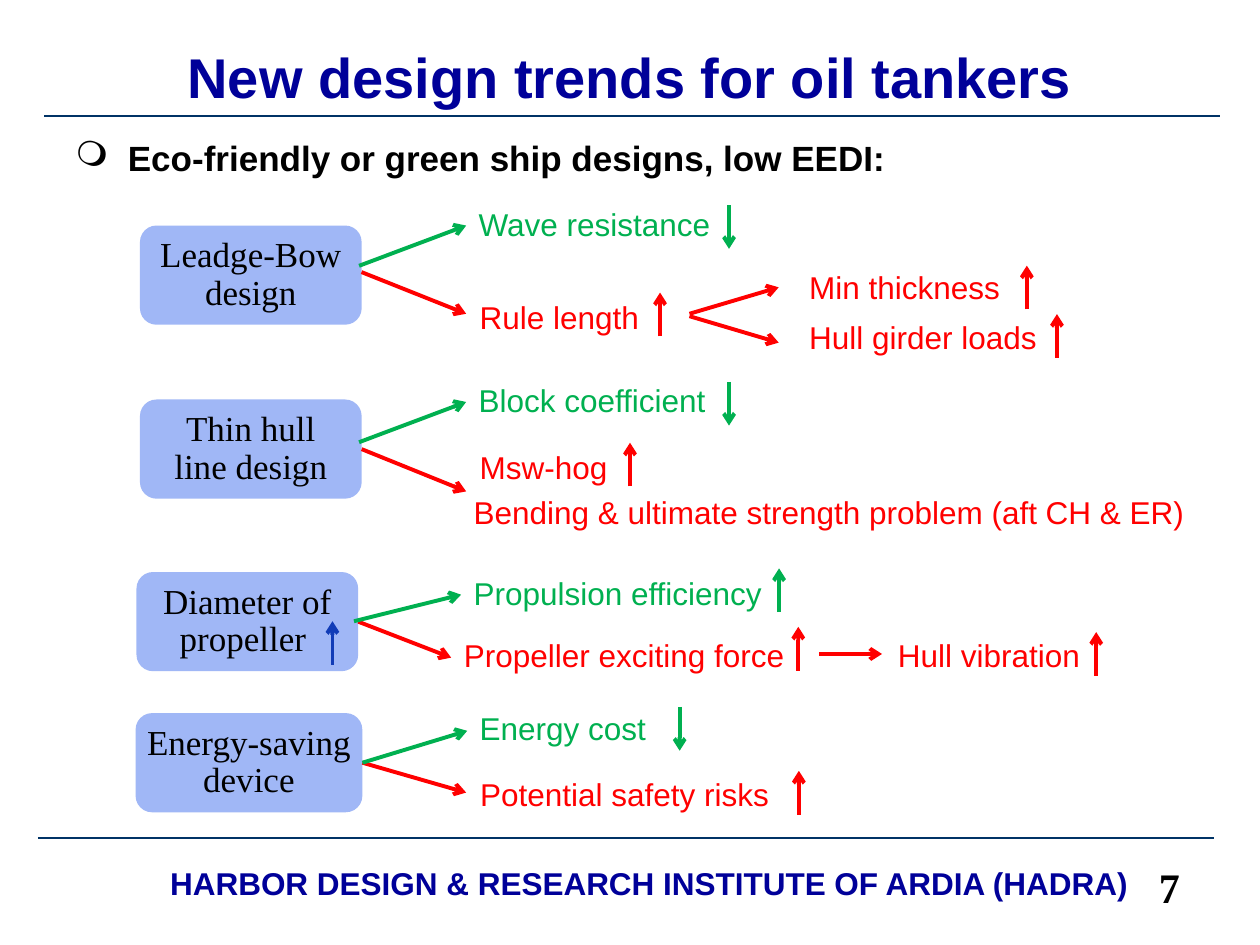
from lxml import etree
from pptx import Presentation
from pptx.dml.color import RGBColor
from pptx.enum.shapes import MSO_CONNECTOR as CONNECTOR, MSO_SHAPE as SHAPE
from pptx.enum.text import MSO_ANCHOR as ANCHOR, PP_ALIGN as ALIGN
from pptx.oxml.ns import qn
from pptx.util import Pt

COLORS = {"navy": "000099", "rule": "003366", "box": "A0B7F6", "black": "000000",
          "good": "00B050", "bad": "FF0000", "blue": "113CB7"}
RIGHT_SIDE = 3
ARROW_HEIGHT = 25

presentation = Presentation()
presentation.slide_width, presentation.slide_height = Pt(720), Pt(540)
slide = presentation.slides.add_slide(presentation.slide_layouts[5])


def write(shape, text, color, size=18, name="Arial", bold=False, align=ALIGN.LEFT,
          spacing=0.9, anchor=ANCHOR.TOP):
    frame = shape.text_frame
    frame.word_wrap = True
    frame.vertical_anchor = anchor
    paragraph = frame.paragraphs[0]
    paragraph.text = text
    paragraph.alignment = align
    paragraph.line_spacing = spacing
    paragraph.space_before = Pt(0)
    for attribute, value in {"size": Pt(size), "name": name, "bold": bold}.items():
        setattr(paragraph.font, attribute, value)
    paragraph.font.color.rgb = RGBColor.from_string(COLORS[color])
    return paragraph


def draw_line(start_x, start_y, end_x, end_y, color, width=2.25, arrow=True):
    line = slide.shapes.add_connector(
        CONNECTOR.STRAIGHT, Pt(start_x), Pt(start_y), Pt(end_x), Pt(end_y))
    line.line.width = Pt(width)
    line.line.color.rgb = RGBColor.from_string(COLORS[color])
    if arrow:
        etree.SubElement(line.line._get_or_add_ln(), qn("a:tailEnd"), type="arrow")
    etree.SubElement(line._element.spPr, qn("a:effectLst"))
    return line


for left, y in [(21.6, 478.8), (25.2, 66.2)]:
    draw_line(left, y, left + 672, y, "rule", width=1, arrow=False)

title = slide.shapes.title
title.left, title.top, title.width, title.height = Pt(36), Pt(21.6), Pt(648), Pt(44)
write(title, "New design trends for oil tankers", "navy", size=32, bold=True,
      align=ALIGN.CENTER, spacing=1.0, anchor=ANCHOR.MIDDLE)

footer = slide.shapes.add_textbox(Pt(82), Pt(494.6), Pt(578), Pt(24.5))
write(footer, "HARBOR DESIGN & RESEARCH INSTITUTE OF ARDIA (HADRA)", "navy", bold=True,
      align=ALIGN.CENTER, spacing=0.8)
page_number = slide.shapes.add_textbox(Pt(655.2), Pt(491.8), Pt(45.4), Pt(33))
write(page_number, "7", "black", size=24, name="Times New Roman", bold=True)

heading = slide.shapes.add_textbox(Pt(36), Pt(77), Pt(647), Pt(28))
paragraph = write(heading, "Eco-friendly or green ship designs, low EEDI:", "black",
                  size=20, bold=True)
properties = paragraph._p.get_or_add_pPr()
properties.set("marL", str(Pt(30)))
properties.set("indent", str(Pt(-30)))
etree.SubElement(properties, qn("a:buChar"), char="❍")

measures = {}
for text, left, top, width in [
    ("Leadge-Bow design", 80, 128.9, 126.7),
    ("Thin hull line design", 80, 228.3, 126.7),
    ("Diameter of propeller ", 78, 326.9, 126.7),
    ("Energy-saving device", 77.5, 407.5, 129.6),
]:
    box = slide.shapes.add_shape(
        SHAPE.ROUNDED_RECTANGLE, Pt(left), Pt(top), Pt(width), Pt(56.7))
    box.shadow.inherit = False
    box.fill.solid()
    box.fill.fore_color.rgb = RGBColor.from_string(COLORS["box"])
    box.line.fill.background()
    write(box, text, "black", size=20, name="Times New Roman",
          align=ALIGN.CENTER, anchor=ANCHOR.MIDDLE)
    measures[text.split()[0]] = box
measures["Energy-saving"].text_frame.margin_left = Pt(3)
measures["Energy-saving"].text_frame.margin_right = Pt(3)

for text, left, top, width, color in [
    ("Wave resistance", 266.4, 115.9, 284, "good"),
    ("Rule length", 267, 169.4, 110, "bad"),
    ("Min thickness", 455.3, 152.2, 132, "bad"),
    ("Hull girder loads", 455.3, 180.8, 148.5, "bad"),
    ("Block coefficient", 266.4, 216.8, 284, "good"),
    ("Msw-hog", 267, 255, 110, "bad"),
    ("Bending & ultimate strength problem (aft CH & ER)", 263.5, 280.8, 425.5, "bad"),
    ("Propulsion efficiency", 263.5, 327, 284, "good"),
    ("Propeller exciting force", 258, 362.4, 202, "bad"),
    ("Hull vibration", 506, 362.4, 126, "bad"),
    ("Energy cost", 267, 404, 127, "good"),
    ("Potential safety risks", 267.3, 441.6, 184, "bad"),
]:
    label = slide.shapes.add_textbox(Pt(left), Pt(top), Pt(width), Pt(26.5))
    write(label, text, color)

for x, top, direction, color in [
    (416.6, 117.2, "down", "good"),
    (377.2, 167.2, "up", "bad"),
    (586.8, 151.8, "up", "bad"),
    (604, 179.5, "up", "bad"),
    (416.6, 218.2, "down", "good"),
    (360, 253, "up", "bad"),
    (190, 355, "up", "blue"),
    (445.2, 324.8, "up", "good"),
    (456.2, 358.2, "up", "bad"),
    (626.4, 361.2, "up", "bad"),
    (388.4, 404, "down", "good"),
    (456.5, 440.5, "up", "bad"),
]:
    ends = (top, top + ARROW_HEIGHT) if direction == "down" else (top + ARROW_HEIGHT, top)
    draw_line(x, ends[0], x, ends[1], color)

for start_x, start_y, end_x, end_y, color, source in [
    (206.6, 155.5, 266.4, 179.3, "bad", None),
    (205.2, 151.9, 266.4, 128.9, "good", None),
    (394, 179.3, 445, 164.2, "bad", None),
    (394, 180.7, 445, 195.8, "bad", None),
    (206.7, 256.6, 266.4, 280.8, "bad", "Thin"),
    (205.2, 252.7, 266.4, 229.7, "good", None),
    (204.7, 355.3, 257.8, 375.8, "bad", "Diameter"),
    (202.3, 355, 263.5, 339.8, "good", None),
    (468, 373.7, 504, 373.7, "bad", None),
    (207.1, 435.9, 266.4, 452.9, "bad", "Energy-saving"),
    (207.1, 435.9, 267, 417.6, "good", "Energy-saving"),
]:
    line = draw_line(start_x, start_y, end_x, end_y, color)
    if source:
        line.begin_connect(measures[source], RIGHT_SIDE)

presentation.save("out.pptx")
